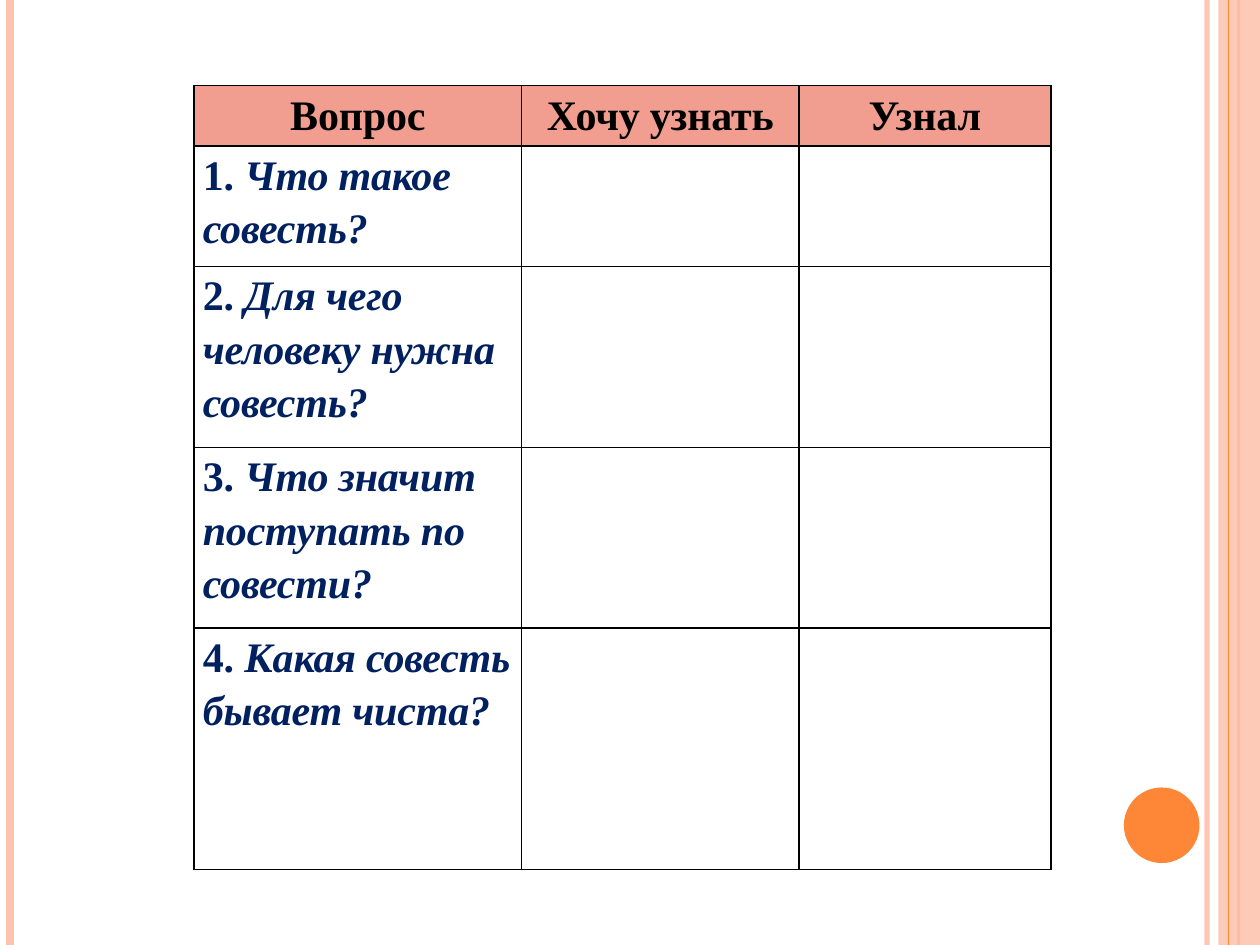
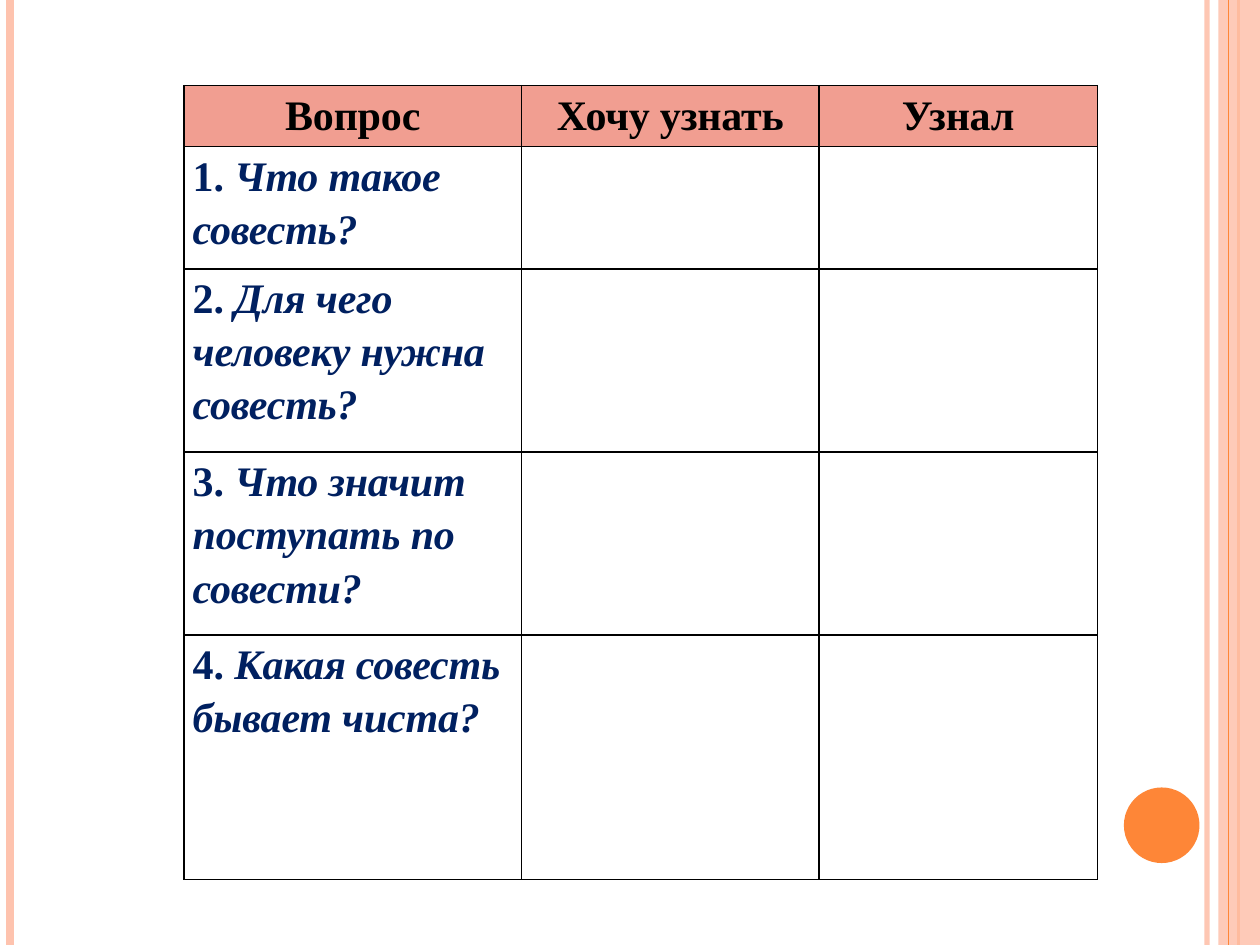
import pptx
import pptx.dml.color
import pptx.enum.shapes
import pptx.enum.text
import pptx.oxml
import pptx.oxml.ns
import pptx.util
from pptx.util import Inches

COLOURS = {
    "peach": "FEC3AE",
    "orange": "FE8637",
    "header": "F19E91",
    "heading": "000000",
    "question": "002060",
    "border": "000000",
}
FONT = "Times New Roman"
HEADINGS = ["Вопрос", "Хочу узнать", "Узнал"]
QUESTIONS = [
    "Что такое совесть?",
    "Для чего человеку нужна совесть?",
    "Что значит поступать по совести?",
    "Какая совесть бывает чиста?",
]
ROW_UNITS = [1, 2, 3, 3, 4]
TABLE_TOP = 0.68
SLIDE_HEIGHT = 7.5


def colour(name):
    return pptx.dml.color.RGBColor.from_string(COLOURS[name])


def set_opacity(shape, percent):
    for tint in shape.element.spPr.iter(pptx.oxml.ns.qn("a:srgbClr")):
        alpha = pptx.oxml.ns.qn("a:alpha")
        tint.append(tint.makeelement(alpha, {"val": str(percent * 1000)}))


def add_stripe(page, x, name, width):
    """Draw a full-height vertical line."""
    stripe = page.shapes.add_connector(
        pptx.enum.shapes.MSO_CONNECTOR.STRAIGHT,
        Inches(x), 0, Inches(x), Inches(SLIDE_HEIGHT))
    stripe.line.color.rgb = colour(name)
    stripe.line.width = pptx.util.Pt(width)
    properties = stripe.element.spPr
    properties.append(properties.makeelement(pptx.oxml.ns.qn("a:effectLst"), {}))
    return stripe


def add_filled(page, kind, left, top, width, height, name):
    shape = page.shapes.add_shape(
        kind, Inches(left), Inches(top), Inches(width), Inches(height))
    shape.shadow.inherit = False
    shape.fill.solid()
    shape.fill.fore_color.rgb = colour(name)
    shape.line.fill.background()
    return shape


def add_frame(page, layout):
    """Draw the side bands and the disc, then hand them to the shared layout."""
    kinds = pptx.enum.shapes.MSO_SHAPE
    inner = add_stripe(page, 9.58, "peach", 3)
    set_opacity(inner, 93)
    left = add_stripe(page, 0.08, "peach", 4.5)
    outer = add_stripe(page, 9.83, "orange", 1.5)
    band = add_filled(page, kinds.RECTANGLE, 9.67, 0, 0.33, SLIDE_HEIGHT, "peach")
    set_opacity(band, 87)
    hairline = add_stripe(page, 9.75, "orange", 0.75)
    disc = add_filled(page, kinds.OVAL, 8.92, 6.25, 0.6, 0.6, "orange")
    for part in (inner, left, outer, band, hairline, disc):
        layout.shapes.element.append(part.element)


def set_borders(cell):
    properties = cell._tc.get_or_add_tcPr()
    for index, side in enumerate(("lnL", "lnR", "lnT", "lnB")):
        properties.insert(index, pptx.oxml.parse_xml(
            f'<a:{side} {pptx.oxml.ns.nsdecls("a")} w="12700"><a:solidFill>'
            f'<a:srgbClr val="{COLOURS["border"]}"/></a:solidFill></a:{side}>'))


def write_cell(cell, runs, name, align):
    """Fill a cell with (text, italic) runs."""
    cell.margin_left = cell.margin_right = Inches(0.07)
    cell.margin_top = cell.margin_bottom = 0
    para = cell.text_frame.paragraphs[0]
    para.alignment = align
    para.line_spacing = 1.15
    para.space_after = pptx.util.Pt(10)
    for text, italic in runs:
        span = para.add_run()
        span.text = text
        span.font.name = FONT
        span.font.size = pptx.util.Pt(24)
        span.font.bold = True
        span.font.italic = italic
        span.font.color.rgb = colour(name)
        span._r.get_or_add_rPr().set("spc", "-10")


def add_question_table(page, left, column_widths, height):
    table = page.shapes.add_table(
        len(ROW_UNITS), len(HEADINGS), Inches(left), Inches(TABLE_TOP),
        Inches(sum(column_widths)), Inches(height)).table
    table.first_row = table.horz_banding = False
    for column, width in zip(table.columns, column_widths):
        column.width = Inches(width)
    for row, units in zip(table.rows, ROW_UNITS):
        row.height = Inches(height * units / sum(ROW_UNITS))
    for cell in table.iter_cells():
        cell.fill.background()
        set_borders(cell)

    alignment = pptx.enum.text.PP_ALIGN
    for index, heading in enumerate(HEADINGS):
        cell = table.cell(0, index)
        cell.fill.solid()
        cell.fill.fore_color.rgb = colour("header")
        write_cell(cell, [(heading, False)], "heading", alignment.CENTER)
    for number, question in enumerate(QUESTIONS, start=1):
        runs = [(f"{number}. ", False), (question, True)]
        write_cell(table.cell(number, 0), runs, "question", alignment.LEFT)


def main():
    deck = pptx.Presentation()
    deck.slide_width = Inches(10)
    deck.slide_height = Inches(SLIDE_HEIGHT)
    blank = deck.slide_layouts[6]
    first = deck.slides.add_slide(blank)
    second = deck.slides.add_slide(blank)
    add_frame(first, blank)
    add_question_table(first, 1.54, [2.6, 2.2, 2], 6.22)
    add_question_table(second, 1.46, [2.68, 2.36, 2.21], 6.3)
    deck.save("out.pptx")


if __name__ == "__main__":
    main()
